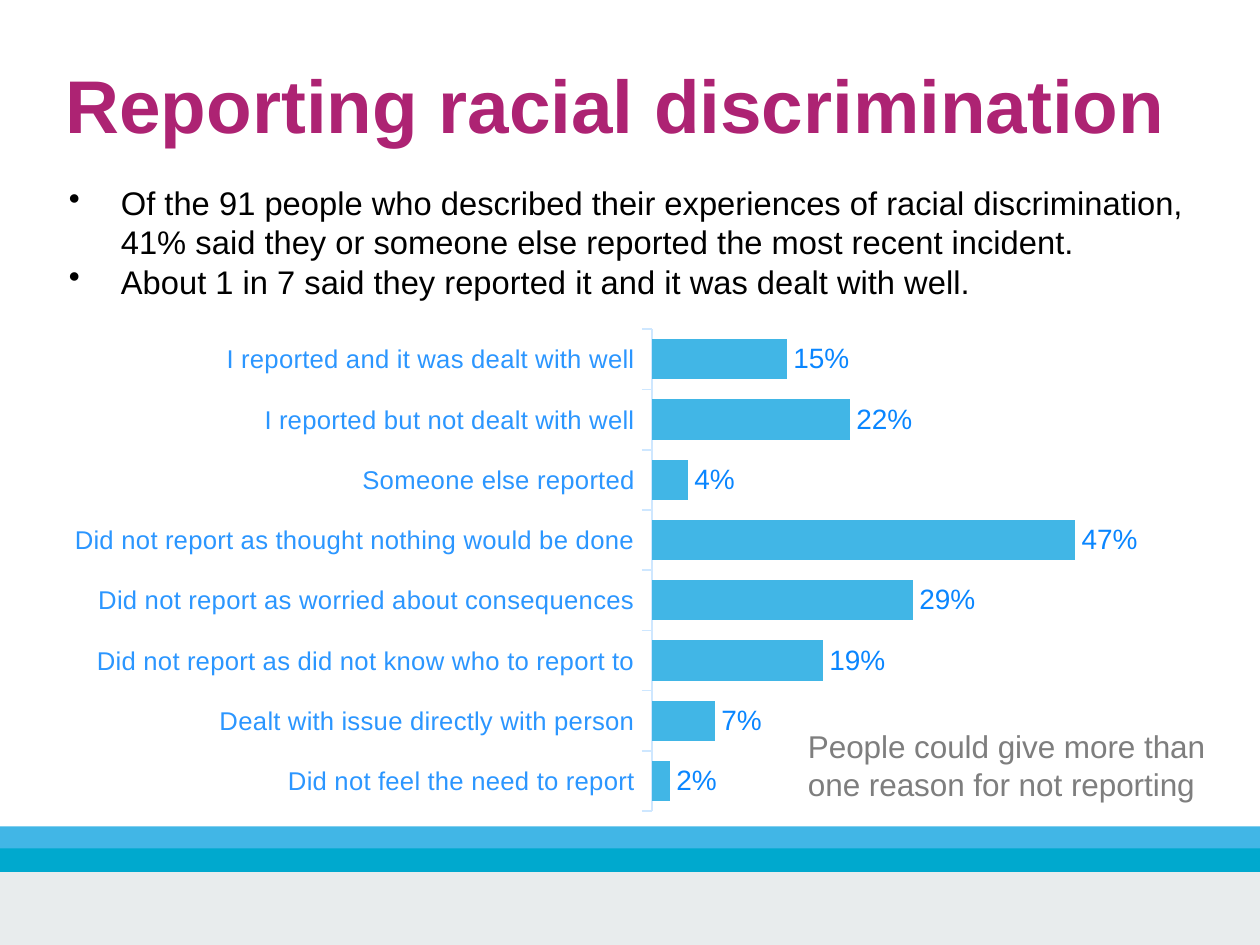
import pptx
import pptx.chart.data
import pptx.dml.color
import pptx.enum.chart
import pptx.enum.shapes
import pptx.enum.text
import pptx.oxml
import pptx.util
from pptx.util import Inches

COLORS = {
    "title": "AD2373", "body": "000000", "note": "7E7E7E",
    "sky": "41B6E6", "teal": "00A9CE", "footer": "E8ECED",
    "axis": "CEE7FF", "category": "2B96FF", "value": "0A86FF",
}
NS = 'xmlns:c="http://schemas.openxmlformats.org/drawingml/2006/chart"'


def rgb(name):
    return pptx.dml.color.RGBColor.from_string(COLORS[name])


def add_text(x, y, w, h, lines, size, color, bold=False):
    """Add a text box without margins, one paragraph per line."""
    tf = s.shapes.add_textbox(Inches(x), Inches(y), Inches(w), Inches(h)).text_frame
    tf.word_wrap = True
    tf.margin_left = tf.margin_right = tf.margin_bottom = 0
    tf.margin_top = Inches(0.01)
    for i, line in enumerate(lines):
        p = tf.paragraphs[0] if i == 0 else tf.add_paragraph()
        r = p.add_run()
        r.text = line
        r.font.name = "Arial"
        r.font.size = pptx.util.Pt(size)
        r.font.bold = bold
        r.font.color.rgb = rgb(color)
    return tf


prs = pptx.Presentation()
prs.slide_width = Inches(7.5)
prs.slide_height = Inches(7.5) * 3 // 4
s = prs.slides.add_slide(prs.slide_layouts[6])

# Footer bands, the last one reaching the bottom edge
for y, h, color in [(5.19, 0.43, "footer"), (4.92, 0.14, "sky"), (5.05, 0.14, "teal")]:
    bottom = prs.slide_height if color == "footer" else Inches(y + h)
    sp = s.shapes.add_shape(pptx.enum.shapes.MSO_SHAPE.RECTANGLE,
                            0, Inches(y), prs.slide_width, bottom - Inches(y))
    sp.shadow.inherit = False
    sp.fill.solid()
    sp.fill.fore_color.rgb = rgb(color)
    sp.line.fill.background()

# Title and bullets
add_text(0.39, 0.34, 6.8, 0.56, ["Reporting racial discrimination"], 32, "title", True)
tf = add_text(0.39, 1.08, 6.7, 0.73, [
    "Of the 91 people who described their experiences of racial discrimination, "
    "41% said they or someone else reported the most recent incident.",
    "About 1 in 7 said they reported it and it was dealt with well.",
], 14, "body")
for p in tf.paragraphs:
    pPr = p._p.get_or_add_pPr()
    pPr.set("marL", str(Inches(0.33)))
    pPr.set("indent", str(-Inches(0.31)))
    bullet = pptx.oxml.parse_xml(
        '<a:buChar xmlns:a="http://schemas.openxmlformats.org/drawingml/2006/main" char="•"/>')
    pPr.append(bullet)

# Bar chart of responses
responses = [
    ("I reported and it was dealt with well", 0.15),
    ("I reported but not dealt with well", 0.22),
    ("Someone else reported", 0.04),
    ("Did not report as thought nothing would be done", 0.47),
    ("Did not report as worried about consequences", 0.29),
    ("Did not report as did not know who to report to", 0.19),
    ("Dealt with issue directly with person", 0.07),
    ("Did not feel the need to report", 0.02),
]
data = pptx.chart.data.CategoryChartData(number_format="0%")
data.categories = [label for label, share in responses]
data.add_series("Share of people", [share for label, share in responses])
left, top, width, height = 0.2, 1.9, 7.0, 3.0
chart = s.shapes.add_chart(pptx.enum.chart.XL_CHART_TYPE.BAR_CLUSTERED, Inches(left),
                           Inches(top), Inches(width), Inches(height), data).chart
chart.has_legend = False
chart.has_title = False
chart.font.name = "Arial"
chart.font.size = pptx.util.Pt(11)

axis = chart.category_axis
axis.reverse_order = True
axis.major_tick_mark = pptx.enum.chart.XL_TICK_MARK.OUTSIDE
axis.format.line.color.rgb = rgb("axis")
axis.format.line.width = pptx.util.Pt(0.75)
axis.tick_labels.font.name = "Arial"
axis.tick_labels.font.size = pptx.util.Pt(11)
axis.tick_labels.font.color.rgb = rgb("category")
chart.value_axis.minimum_scale = 0
chart.value_axis.maximum_scale = 0.5
chart.value_axis.has_major_gridlines = False
chart.value_axis.visible = False

plot = chart.plots[0]
plot.gap_width = 50
plot.vary_by_categories = False
plot.series[0].format.fill.solid()
plot.series[0].format.fill.fore_color.rgb = rgb("sky")
plot.has_data_labels = True
labels = plot.data_labels
labels.show_value = True
labels.number_format = "0%"
labels.number_format_is_linked = False
labels.position = pptx.enum.chart.XL_LABEL_POSITION.OUTSIDE_END
labels.font.name = "Arial"
labels.font.size = pptx.util.Pt(12)
labels.font.color.rgb = rgb("value")

# Fix the plot area so that the axis stands at 3.88 inches
fractions = {"x": (3.88 - left) / width, "y": (1.96 - top) / height,
             "w": 2.68 / width, "h": 2.87 / height}
modes = "".join(f'<c:{k}Mode val="edge"/>' for k in "xy")
sizes = "".join(f'<c:{k} val="{v:.4f}"/>' for k, v in fractions.items())
layout = pptx.oxml.parse_xml(
    f'<c:layout {NS}><c:manualLayout><c:layoutTarget val="inner"/>'
    f'{modes}{sizes}</c:manualLayout></c:layout>')
plot_area = chart._chartSpace.chart.plotArea
for old in plot_area.findall(layout.tag):
    plot_area.remove(old)
plot_area.insert(0, layout)

# Note beside the short bars
add_text(4.81, 4.32, 2.5, 0.47,
         ["People could give more than one reason for not reporting"], 13.5, "note")

prs.save("out.pptx")
